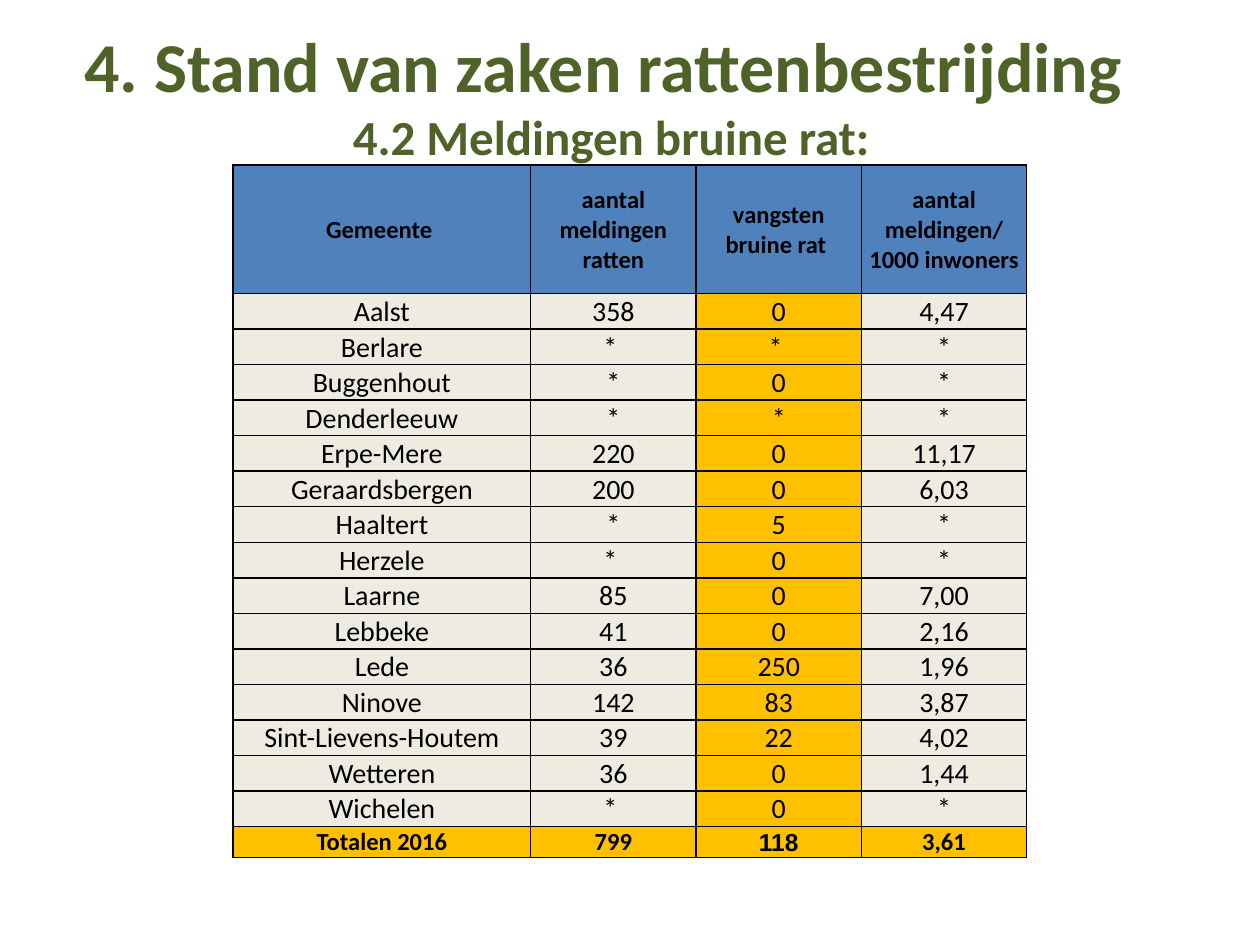
"""Build the slide with brown rat reports and catches per municipality."""
from typing import NamedTuple

from lxml.etree import SubElement
from pptx import Presentation
from pptx.dml.color import RGBColor
from pptx.enum.text import MSO_ANCHOR, MSO_AUTO_SIZE, PP_ALIGN
from pptx.oxml.ns import qn
from pptx.util import Pt

OLIVE = RGBColor(0x4F, 0x62, 0x28)
BLACK = RGBColor(0, 0, 0)
BLUE = RGBColor(0x4F, 0x81, 0xBD)
CREAM = RGBColor(0xEE, 0xEC, 0xE1)
AMBER = RGBColor(0xFF, 0xC0, 0x00)
CATCHES_COLUMN = 2
COLUMN_WIDTHS = (170.1, 94.5, 94.5, 94.5)


class Record(NamedTuple):
    municipality: str
    reports: str
    catches: str
    per_thousand: str


class RowStyle(NamedTuple):
    height: float
    size: int
    bold: bool
    fill: RGBColor
    catches_fill: RGBColor
    catches_font: str = "Calibri"


HEADER_STYLE = RowStyle(73.5, 14, True, BLUE, BLUE)
MUNICIPALITY_STYLE = RowStyle(20.2, 16, False, CREAM, AMBER)
TOTAL_STYLE = RowStyle(17.4, 14, True, AMBER, AMBER, "Arial")

HEADER = Record("Gemeente ", "aantal meldingen ratten", "vangsten bruine rat ",
                "aantal meldingen/ 1000 inwoners")
MUNICIPALITIES = [
    Record("Aalst", "358", "0", "4,47"),
    Record("Berlare", "* ", "* ", "*"),
    Record("Buggenhout", "*", "0", "*"),
    Record("Denderleeuw", "*", "*", "*"),
    Record("Erpe-Mere", "220", "0", "11,17"),
    Record("Geraardsbergen", "200", "0", "6,03"),
    Record("Haaltert", "*", "5", "*"),
    Record("Herzele", "* ", "0", "*"),
    Record("Laarne", "85", "0", "7,00"),
    Record("Lebbeke", "41", "0", "2,16"),
    Record("Lede", "36", "250", "1,96"),
    Record("Ninove", "142", "83", "3,87"),
    Record("Sint-Lievens-Houtem", "39", "22", "4,02"),
    Record("Wetteren", "36", "0", "1,44"),
    Record("Wichelen", "* ", "0", "*"),
]
TOTAL = Record("Totalen 2016", "799", "118", "3,61")


def format_paragraph(paragraph, size: int, bold: bool, color: RGBColor, font: str = "Calibri") -> None:
    paragraph.alignment = PP_ALIGN.CENTER
    paragraph.font.name = font
    paragraph.font.size = Pt(size)
    paragraph.font.bold = bold
    paragraph.font.color.rgb = color


def add_borders(cell) -> None:
    properties = cell._tc.get_or_add_tcPr()
    for position, side in enumerate(("lnL", "lnR", "lnT", "lnB")):
        line = SubElement(properties, qn(f"a:{side}"), w=str(Pt(1)))
        fill = SubElement(line, qn("a:solidFill"))
        SubElement(fill, qn("a:srgbClr"), val=str(BLACK))
        properties.insert(position, line)


def fill_row(row, record: Record, style: RowStyle) -> None:
    row.height = Pt(style.height)
    for column, (cell, text) in enumerate(zip(row.cells, record)):
        is_catches = column == CATCHES_COLUMN
        cell.text = text
        cell.vertical_anchor = MSO_ANCHOR.MIDDLE
        cell.margin_left = cell.margin_right = cell.margin_top = Pt(0.72)
        cell.margin_bottom = Pt(0)
        cell.fill.solid()
        cell.fill.fore_color.rgb = style.catches_fill if is_catches else style.fill
        add_borders(cell)
        format_paragraph(cell.text_frame.paragraphs[0], style.size, style.bold, BLACK,
                         style.catches_font if is_catches else "Calibri")


def add_heading(slide) -> None:
    heading = slide.shapes.title
    heading.left, heading.top, heading.width, heading.height = Pt(25.2), Pt(9.4), Pt(648), Pt(390)
    frame = heading.text_frame
    frame.word_wrap = True
    frame.auto_size = MSO_AUTO_SIZE.NONE
    frame.vertical_anchor = MSO_ANCHOR.TOP
    frame.text = "4. Stand van zaken rattenbestrijding \n4.2 Meldingen bruine rat:"
    for paragraph, size in zip(frame.paragraphs, (40, 28)):
        format_paragraph(paragraph, size, True, OLIVE)


def add_report_table(slide) -> None:
    rows = [(HEADER, HEADER_STYLE),
            *((record, MUNICIPALITY_STYLE) for record in MUNICIPALITIES),
            (TOTAL, TOTAL_STYLE)]
    height = sum(style.height for _, style in rows)
    table = slide.shapes.add_table(len(rows), len(COLUMN_WIDTHS), Pt(133.2), Pt(94.3),
                                   Pt(sum(COLUMN_WIDTHS)), Pt(height)).table
    table.first_row = table.horz_banding = False
    for column, width in zip(table.columns, COLUMN_WIDTHS):
        column.width = Pt(width)
    for row, (record, style) in zip(table.rows, rows):
        fill_row(row, record, style)


def main() -> None:
    presentation = Presentation()
    presentation.slide_width, presentation.slide_height = Pt(720), Pt(540)
    slide = presentation.slides.add_slide(presentation.slide_layouts[5])
    add_heading(slide)
    add_report_table(slide)
    presentation.save("out.pptx")


if __name__ == "__main__":
    main()
